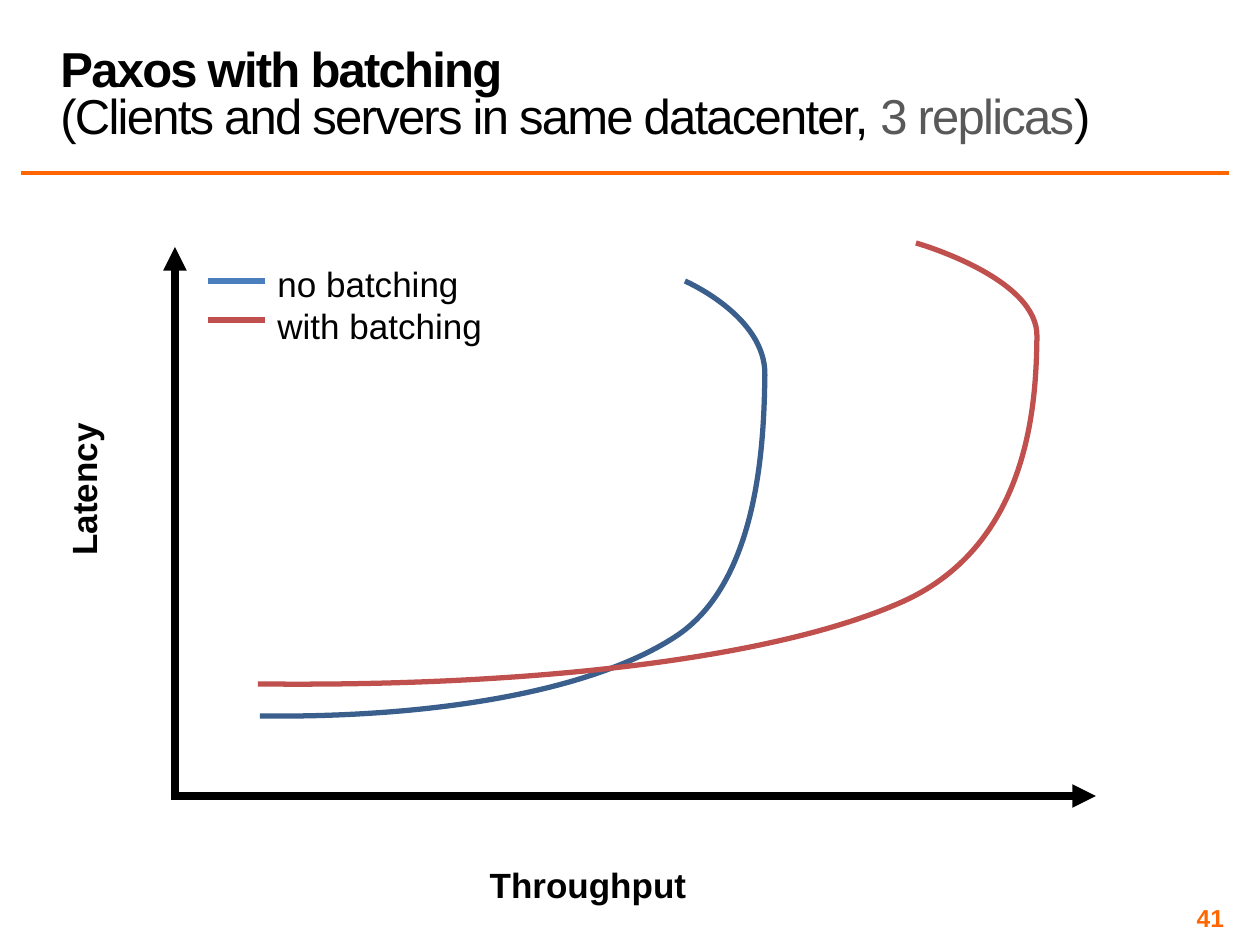
import dataclasses
import typing

import lxml.etree
import pptx
import pptx.dml.color
import pptx.enum.shapes
import pptx.enum.text
import pptx.oxml.ns
import pptx.util

PX = 914400 / 126
FONT = "Arial"
BLACK, ORANGE, GREY = "000000", "FF6600", "595959"
BLUE, DARK_BLUE, RED = "4B7EBC", "3A5F8C", "C0504D"
ALIGN = pptx.enum.text.PP_ALIGN
ANCHOR = pptx.enum.text.MSO_ANCHOR
Point = tuple[int, int]


@dataclasses.dataclass(frozen=True)
class Line:
    start: Point
    end: Point
    color: str
    width: float
    arrow: bool = False


@dataclasses.dataclass(frozen=True)
class Curve:
    points: tuple[Point, ...]
    color: str


@dataclasses.dataclass(frozen=True)
class Run:
    text: str
    bold: bool = False
    color: str = BLACK
    break_after: bool = False


LINES = [
    Line((21, 173), (1229, 173), ORANGE, 2),
    Line((175, 799), (175, 247), BLACK, 4.5, arrow=True),
    Line((171, 796), (1096, 796), BLACK, 4.5, arrow=True),
    Line((208, 281), (265, 281), BLUE, 3),
    Line((208, 320), (265, 320), RED, 3),
]
NO_BATCHING = Curve(
    ((260, 716), (432, 718), (593, 692), (678, 635), (761, 578), (764, 435),
     (765, 375), (766, 316), (685, 281), (685, 281)), DARK_BLUE)
WITH_BATCHING = Curve(
    ((258, 684), (525, 687), (772, 660), (902, 602), (1032, 544), (1036, 398),
     (1037, 338), (1040, 278), (916, 243), (916, 243)), RED)


def emu(length: int) -> int:
    return round(length * PX)


def rgb(color: str) -> pptx.dml.color.RGBColor:
    return pptx.dml.color.RGBColor.from_string(color)


def draw_line(slide: typing.Any, line: Line) -> None:
    connector = slide.shapes.add_connector(
        pptx.enum.shapes.MSO_CONNECTOR.STRAIGHT,
        *map(emu, (*line.start, *line.end)))
    connector.line.color.rgb = rgb(line.color)
    connector.line.width = pptx.util.Pt(line.width)
    if line.arrow:
        lxml.etree.SubElement(connector.line._get_or_add_ln(),
                              pptx.oxml.ns.qn("a:tailEnd"), type="triangle")
    lxml.etree.SubElement(connector._element.spPr, pptx.oxml.ns.qn("a:effectLst"))


def draw_curve(slide: typing.Any, curve: Curve) -> None:
    builder = slide.shapes.build_freeform(*curve.points[0], scale=PX)
    builder.add_line_segments(curve.points[1:], close=False)
    shape = builder.convert_to_shape()
    segments = shape._element.findall(".//" + pptx.oxml.ns.qn("a:lnTo"))
    for index in range(0, len(segments), 3):
        first, *others = segments[index:index + 3]
        bezier = lxml.etree.Element(pptx.oxml.ns.qn("a:cubicBezTo"))
        first.addprevious(bezier)
        for segment in (first, *others):
            bezier.append(segment[0])
            segment.getparent().remove(segment)
    shape.shadow.inherit = False
    shape.fill.background()
    shape.line.color.rgb = rgb(curve.color)
    shape.line.width = pptx.util.Pt(3)


def add_text(slide: typing.Any, box: tuple[int, int, int, int],
             paragraphs: list[list[Run]], *, size: int = 20,
             align: ALIGN = ALIGN.LEFT, anchor: ANCHOR = ANCHOR.TOP,
             wrap: bool = True, rotation: int = 0, inset: int | None = None,
             line_spacing: float = 1.0, tracking: int = 0) -> None:
    shape = slide.shapes.add_textbox(*map(emu, box))
    shape.rotation = rotation
    frame = shape.text_frame
    frame.word_wrap = wrap
    frame.vertical_anchor = anchor
    if inset is not None:
        frame.margin_left = frame.margin_right = emu(inset)
        frame.margin_top = frame.margin_bottom = emu(inset)
    for index, runs in enumerate(paragraphs):
        paragraph = frame.add_paragraph() if index else frame.paragraphs[0]
        paragraph.alignment = align
        paragraph.line_spacing = line_spacing
        for item in runs:
            run = paragraph.add_run()
            run.text = item.text
            run.font.name = FONT
            run.font.size = pptx.util.Pt(size)
            run.font.bold = item.bold
            run.font.color.rgb = rgb(item.color)
            if tracking:
                run.font._element.set("spc", str(tracking * 100))
            if item.break_after:
                paragraph.add_line_break()


def main() -> None:
    presentation = pptx.Presentation()
    presentation.slide_width = emu(1260)
    presentation.slide_height = emu(945)
    slide = presentation.slides.add_slide(presentation.slide_layouts[6])

    add_text(slide, (48, 3, 1181, 147),
             [[Run("Paxos with batching", bold=True, break_after=True),
               Run("(Clients and servers in same datacenter, "),
               Run("3 replicas", color=GREY), Run(")")]],
             size=28, anchor=ANCHOR.BOTTOM, line_spacing=0.8, tracking=-1)
    for line in LINES:
        draw_line(slide, line)
    add_text(slide, (4, 462, 159, 55), [[Run("Latency", bold=True)]],
             align=ALIGN.CENTER, wrap=False, rotation=270)
    add_text(slide, (476, 857, 224, 55), [[Run("Throughput", bold=True)]],
             align=ALIGN.CENTER, wrap=False)
    add_text(slide, (265, 256, 232, 97),
             [[Run("no batching")], [Run("with batching")]], wrap=False)
    for curve in (NO_BATCHING, WITH_BATCHING):
        draw_curve(slide, curve)
    add_text(slide, (935, 903, 294, 29), [[Run("41", bold=True, color=ORANGE)]],
             size=14, align=ALIGN.RIGHT, anchor=ANCHOR.MIDDLE, inset=5)

    presentation.save("out.pptx")


if __name__ == "__main__":
    main()
